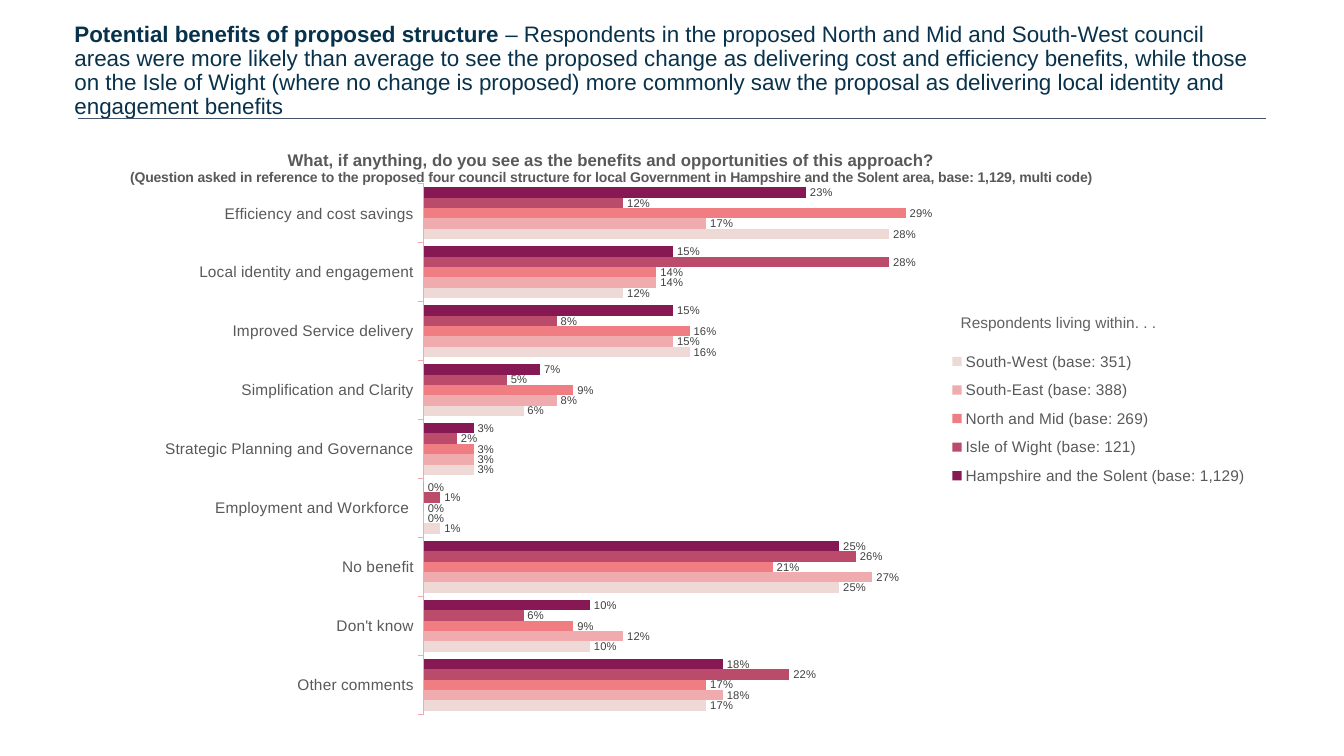
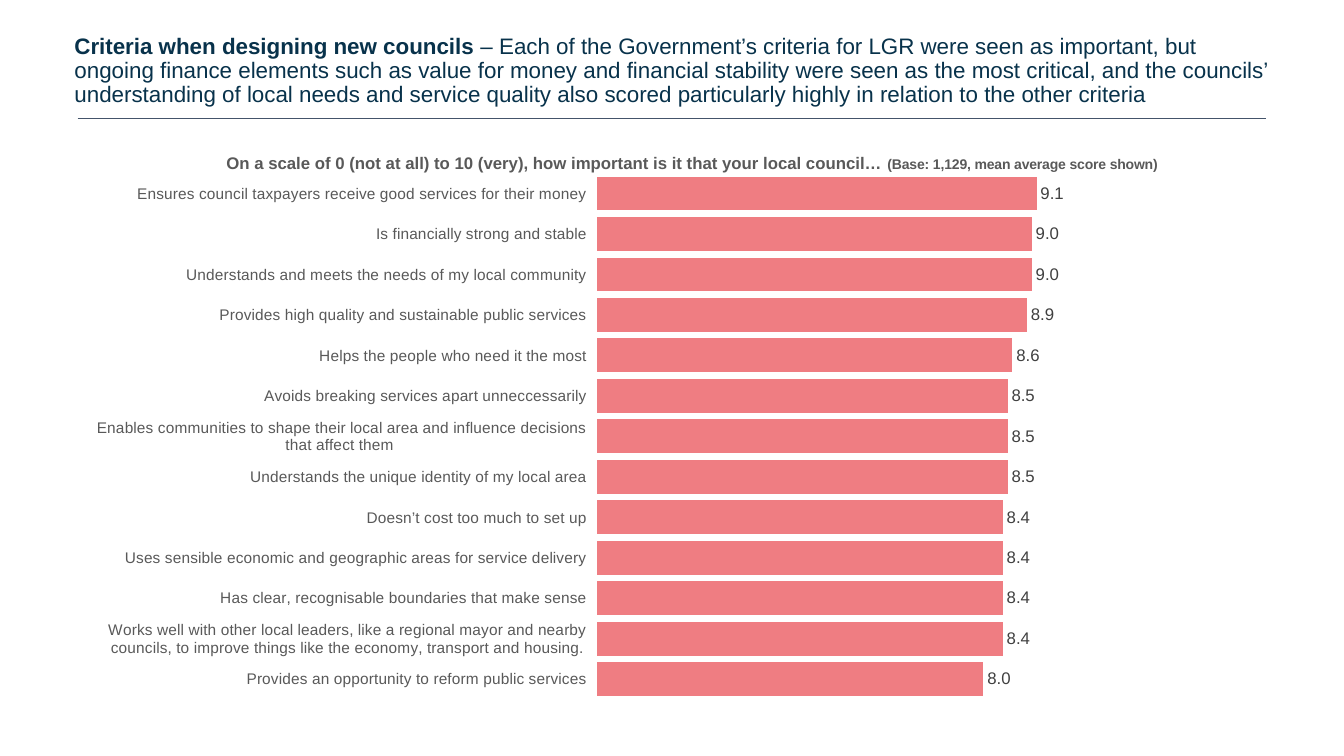
from lxml.etree import SubElement
from pptx import Presentation
from pptx.chart.data import CategoryChartData
from pptx.dml.color import RGBColor
from pptx.enum.chart import XL_CHART_TYPE as CHART, XL_LABEL_POSITION as LABEL
from pptx.enum.chart import XL_LEGEND_POSITION as LEGEND, XL_TICK_LABEL_POSITION as TICK_LABEL
from pptx.enum.chart import XL_TICK_MARK as TICK
from pptx.enum.shapes import MSO_CONNECTOR as CONNECTOR
from pptx.enum.text import MSO_ANCHOR as ANCHOR
from pptx.oxml import parse_xml
from pptx.oxml.ns import nsdecls, qn
from pptx.util import Inches, Pt

FONT = "Arial"
COLORS = {
    "navy": "08324B", "rule": "44546A", "grey": "595959", "label": "404040",
    "note": "616161", "plum": "861953", "rose": "BA4B6B", "coral": "EF7D82",
    "pink": "EFABAD", "blush": "EFD9D7",
}

BENEFITS = [
    "Efficiency and cost savings", "Local identity and engagement",
    "Improved Service delivery", "Simplification and Clarity",
    "Strategic Planning and Governance", "Employment and Workforce ",
    "No benefit", "Don't know", "Other comments",
]
AREAS = [
    ("Hampshire and the Solent (base: 1,129)", "plum",
     [0.23, 0.15, 0.15, 0.07, 0.03, 0, 0.25, 0.1, 0.18]),
    ("Isle of Wight (base: 121)", "rose",
     [0.12, 0.28, 0.08, 0.05, 0.02, 0.01, 0.26, 0.06, 0.22]),
    ("North and Mid (base: 269)", "coral",
     [0.29, 0.14, 0.16, 0.09, 0.03, 0, 0.21, 0.09, 0.17]),
    ("South-East (base: 388)", "pink",
     [0.17, 0.14, 0.15, 0.08, 0.03, 0, 0.27, 0.12, 0.18]),
    ("South-West (base: 351)", "blush",
     [0.28, 0.12, 0.16, 0.06, 0.03, 0.01, 0.25, 0.1, 0.17]),
]
CRITERIA = {
    "Ensures council taxpayers receive good services for their money": 9.1,
    "Is financially strong and stable": 9.0,
    "Understands and meets the needs of my local community": 9.0,
    "Provides high quality and sustainable public services": 8.9,
    "Helps the people who need it the most": 8.6,
    "Avoids breaking services apart unneccessarily": 8.5,
    "Enables communities to shape their local area and influence decisions that affect them ": 8.5,
    "Understands the unique identity of my local area": 8.5,
    "Doesn’t cost too much to set up": 8.4,
    "Uses sensible economic and geographic areas for service delivery": 8.4,
    "Has clear, recognisable boundaries that make sense": 8.4,
    "Works well with other local leaders, like a regional mayor and nearby councils, "
    "to improve things like the economy, transport and housing.": 8.4,
    "Provides an opportunity to reform public services": 8.0,
}


def rgb(name):
    return RGBColor.from_string(COLORS[name])


def style(font, size, color, bold=None):
    font.name = FONT
    font.size = Pt(size)
    font.color.rgb = rgb(color)
    font.bold = bold


def add_text(s, box, runs, size, color, anchor=ANCHOR.TOP, spacing=None):
    tf = s.shapes.add_textbox(*map(Inches, box)).text_frame
    tf.word_wrap = True
    tf.vertical_anchor = anchor
    p = tf.paragraphs[0]
    p.line_spacing = spacing
    style(p.font, size, color)
    for text, bold in runs:
        r = p.add_run()
        r.text = text
        r.font.bold = bold


def add_header(s, box, topic, finding):
    add_text(s, box, [(topic, True), (finding, False)], 16, "navy", ANCHOR.MIDDLE, 0.9)
    y = Inches(1.17)
    rule = s.shapes.add_connector(CONNECTOR.STRAIGHT, Inches(0.77), y, Inches(12.56), y)
    rule.line.color.rgb = rgb("rule")
    rule.line.width = Pt(0.5)
    SubElement(rule._element.spPr, qn("a:effectLst"))


def set_layout(parent, index, inner=False, **place):
    for old in parent.findall(qn("c:layout")):
        parent.remove(old)
    target = '<c:layoutTarget val="inner"/>' if inner else ""
    modes = "".join(f'<c:{k}Mode val="edge"/>' for k in "xy")
    values = "".join(f'<c:{k} val="{v}"/>' for k, v in place.items())
    parent.insert(index, parse_xml(
        f'<c:layout {nsdecls("c")}><c:manualLayout>{target}{modes}{values}'
        "</c:manualLayout></c:layout>"))


def add_chart_title(chart, lines, x, y):
    tf = chart.chart_title.text_frame
    for i, line in enumerate(lines):
        p = tf.add_paragraph() if i else tf.paragraphs[0]
        style(p.font, 12, "grey", True)
        for text, size in line:
            r = p.add_run()
            r.text = text
            style(r.font, size, "grey", True)
    set_layout(chart.element.find(".//" + qn("c:title")), 1, x=x, y=y)


def add_bar_chart(s, box, cats, series, fmt, maximum, gap, label_size, plot):
    data = CategoryChartData(number_format=fmt)
    data.categories = cats
    for name, _, values in series:
        data.add_series(name, values)
    chart = s.shapes.add_chart(CHART.BAR_CLUSTERED, *map(Inches, box), data).chart
    chart.font.name = FONT
    chart.font.size = Pt(12)
    chart.has_legend = False

    cat_axis = chart.category_axis
    cat_axis.reverse_order = True
    cat_axis.major_tick_mark = TICK.NONE
    cat_axis.tick_label_position = TICK_LABEL.LOW
    cat_axis.has_major_gridlines = False
    cat_axis.format.line.fill.background()
    style(cat_axis.tick_labels.font, 11, "grey")

    val_axis = chart.value_axis
    val_axis.minimum_scale = 0
    val_axis.maximum_scale = maximum
    val_axis.has_major_gridlines = False
    val_axis.visible = False

    bars = chart.plots[0]
    bars.gap_width = gap
    bars.overlap = 0
    bars.vary_by_categories = False
    for ser, (_, color, _) in zip(bars.series, series):
        ser.format.fill.solid()
        ser.format.fill.fore_color.rgb = rgb(color)
        ser.invert_if_negative = False
        labels = ser.data_labels
        labels.show_value = True
        labels.number_format = fmt
        labels.number_format_is_linked = False
        labels.position = LABEL.OUTSIDE_END
        style(labels.font, label_size, "label")
    x, y, w, h = plot
    set_layout(chart.element.find(".//" + qn("c:plotArea")), 0, True, x=x, y=y, w=w, h=h)
    return chart


def add_area_legend(s, chart):
    chart.has_legend = True
    legend = chart.legend
    legend.position = LEGEND.RIGHT
    legend.include_in_layout = False
    style(legend.font, 11, "grey")
    set_layout(chart.element.find(".//" + qn("c:legend")), 1, x=0.76, y=0.37, w=0.24, h=0.26)
    add_text(s, (9.43, 3.06, 3.91, 0.29), [("Respondents living within. . .", None)], 11, "note")


def build_benefits(s):
    add_header(
        s, (0.64, -0.02, 12.01, 1.45), "Potential benefits of proposed structure",
        " – Respondents in the proposed North and Mid and South-West council areas were more "
        "likely than average to see the proposed change as delivering cost and efficiency "
        "benefits, while those on the Isle of Wight (where no change is proposed) more commonly "
        "saw the proposal as delivering local identity and engagement benefits")
    chart = add_bar_chart(s, (-0.41, 1.22, 12.85, 5.87), BENEFITS, AREAS, "0%", 0.35, 70, 8,
                          (0.359, 0.103, 0.449, 0.897))
    cat_axis = chart.category_axis
    cat_axis.major_tick_mark = TICK.OUTSIDE
    cat_axis.format.line.color.rgb = rgb("pink")
    cat_axis.format.line.width = Pt(0.75)
    add_chart_title(chart, [
        [("What, if anything, do you see as the benefits and opportunities of this approach?", 12)],
        [("(Question asked in reference to the proposed four council structure for local "
          "Government in Hampshire and the Solent area, base: 1,129, multi code)", 10)],
    ], 0.13, 0.04)
    add_area_legend(s, chart)


def build_criteria(s):
    add_header(
        s, (0.64, -0.02, 12.13, 1.45), "Criteria when designing new councils",
        " – Each of the Government’s criteria for LGR were seen as important, but ongoing "
        "finance elements such as value for money and financial stability were seen as the most "
        "critical, and the councils’ understanding of local needs and service quality also "
        "scored particularly highly in relation to the other criteria")
    chart = add_bar_chart(s, (0.92, 1.32, 11.77, 5.62), list(CRITERIA),
                          [("Series 1", "coral", list(CRITERIA.values()))],
                          "#,##0.0", 10, 20, 12, (0.425, 0.071, 0.407, 0.929))
    add_chart_title(chart, [[
        ("On a scale of 0 (not at all) to 10 (very), how important is it that your "
         "local council… ", 12),
        ("(Base: 1,129, mean average score shown)", 10),
    ]], 0.11, 0.03)


def main():
    prs = Presentation()
    prs.slide_width = Inches(13.33)
    prs.slide_height = Inches(7.5)
    for build in (build_benefits, build_criteria):
        build(prs.slides.add_slide(prs.slide_layouts[6]))
    prs.save("out.pptx")


if __name__ == "__main__":
    main()
